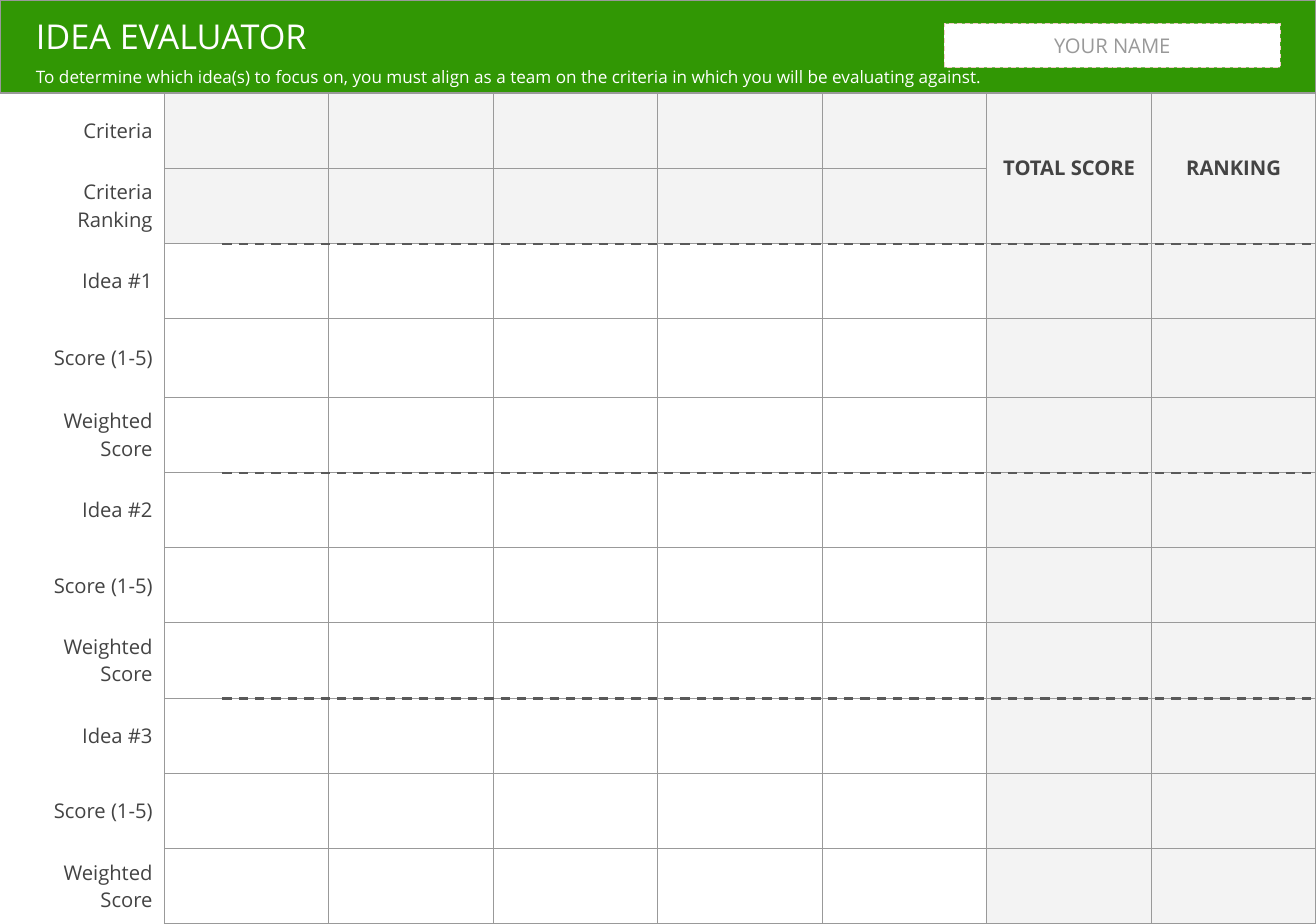
from lxml import etree
from pptx import Presentation
from pptx.dml.color import RGBColor
from pptx.enum.dml import MSO_LINE
from pptx.enum.shapes import MSO_CONNECTOR, MSO_SHAPE
from pptx.enum.text import MSO_ANCHOR, PP_ALIGN
from pptx.oxml.ns import qn
from pptx.util import Pt

RECTANGLE = MSO_SHAPE.RECTANGLE
STRAIGHT = MSO_CONNECTOR.STRAIGHT
DASH = MSO_LINE.DASH
MIDDLE = MSO_ANCHOR.MIDDLE
LEFT, CENTER, RIGHT = PP_ALIGN.LEFT, PP_ALIGN.CENTER, PP_ALIGN.RIGHT

GREEN = RGBColor(0x31, 0x97, 0x04)
WHITE = RGBColor(0xFF, 0xFF, 0xFF)
PINK = RGBColor(0xF4, 0xCC, 0xCC)
PALE_GRAY = RGBColor(0xF3, 0xF3, 0xF3)
GRAY = RGBColor(0x99, 0x99, 0x99)
DARK_GRAY = RGBColor(0x59, 0x59, 0x59)
INK = RGBColor(0x43, 0x43, 0x43)

FONT = "Open Sans"
INSET = 7.75
SLIDE_WIDTH, SLIDE_HEIGHT = 846, 594
HEADER_HEIGHT = 59.8

IDEA_ROWS = ["Score (1-5)", "Weighted Score"]
ROW_LABELS = ["Criteria", "Criteria Ranking"]
for number in (1, 2, 3):
    ROW_LABELS += [f"Idea #{number}"] + IDEA_ROWS
RESULT_LABELS = {6: "TOTAL SCORE", 7: "RANKING"}
COLUMN_COUNT = 8
HEADING_ROWS = 2
ROW_HEIGHT, TALL_ROW_HEIGHT, TALL_ROW = 48.35, 50.6, 3
DIVIDER_ROWS = (2, 5, 8)
DIVIDER_LEFT = 143


def add_text(para, text, size, color, align=LEFT, bold=False):
    para.alignment = align
    span = para.add_run()
    span.text = text
    span.font.name = FONT
    span.font.size = Pt(size)
    span.font.bold = bold
    span.font.color.rgb = color


def set_insets(frame):
    frame.margin_left = frame.margin_right = Pt(INSET)
    frame.margin_top = frame.margin_bottom = Pt(INSET)
    frame.word_wrap = True


def add_box(slide, left, top, width, height, fill, line):
    box = slide.shapes.add_shape(RECTANGLE, Pt(left), Pt(top), Pt(width), Pt(height))
    box.shadow.inherit = False
    box.fill.solid()
    box.fill.fore_color.rgb = fill
    box.line.color.rgb = line
    box.line.width = Pt(0.75)
    return box


def add_header(slide, left, top, width, height):
    add_box(slide, left, top, width, height, GREEN, GRAY)
    heading = slide.shapes.add_textbox(Pt(left + 15.4), Pt(top + 2.2), Pt(626), Pt(104))
    frame = heading.text_frame
    set_insets(frame)
    add_text(frame.paragraphs[0], "IDEA EVALUATOR", 22, WHITE)
    para = frame.add_paragraph()
    para.line_spacing = 1.5
    add_text(para, "To determine which idea(s) to focus on, you must align as a team on "
             "the criteria in which you will be evaluating against.", 11, WHITE)

    name_box = add_box(slide, left + width - 239, top + 15.2, 216, 28.2, WHITE, PINK)
    name_box.line.dash_style = DASH
    frame = name_box.text_frame
    set_insets(frame)
    frame.margin_top = frame.margin_bottom = 0
    frame.vertical_anchor = MIDDLE
    add_text(frame.paragraphs[0], "YOUR NAME", 13, GRAY, CENTER)


def set_borders(cell, visible_sides):
    """Draw the named sides (from L, R, T, B) in gray and hide the others."""
    properties = cell._tc.get_or_add_tcPr()
    for side in "LRTB":
        line = etree.SubElement(properties, qn(f"a:ln{side}"), w=str(Pt(0.75)))
        if side in visible_sides:
            fill = etree.SubElement(line, qn("a:solidFill"))
            etree.SubElement(fill, qn("a:srgbClr"), val=str(GRAY))
        else:
            etree.SubElement(line, qn("a:noFill"))


def label_cell(cell, text, align, bold=False):
    cell.vertical_anchor = MIDDLE
    cell.margin_left = cell.margin_right = Pt(INSET)
    cell.margin_top = cell.margin_bottom = Pt(5)
    add_text(cell.text_frame.paragraphs[0], text, 13, INK, align, bold)


def add_score_table(slide, left, top, width, height):
    row_count = len(ROW_LABELS)
    table = slide.shapes.add_table(row_count, COLUMN_COUNT, Pt(left), Pt(top),
                                   Pt(width), Pt(height)).table
    table.first_row = table.horz_banding = False
    for column in table.columns:
        column.width = Pt(width / COLUMN_COUNT)
    for index, row in enumerate(table.rows):
        row.height = Pt(TALL_ROW_HEIGHT if index == TALL_ROW else ROW_HEIGHT)

    for row in range(row_count):
        for column in range(COLUMN_COUNT):
            cell = table.cell(row, column)
            set_borders(cell, "R" if column == 0 else "LRTB")
            if column and (row < HEADING_ROWS or column in RESULT_LABELS):
                cell.fill.solid()
                cell.fill.fore_color.rgb = PALE_GRAY
            else:
                cell.fill.background()
        label_cell(table.cell(row, 0), ROW_LABELS[row], RIGHT)

    for column, label in RESULT_LABELS.items():
        heading = table.cell(0, column)
        heading.merge(table.cell(HEADING_ROWS - 1, column))
        label_cell(heading, label, CENTER, bold=True)


def add_dividers(slide, left, top, right):
    """Draw a dashed line above each idea."""
    for row in DIVIDER_ROWS:
        extra = TALL_ROW_HEIGHT - ROW_HEIGHT if row > TALL_ROW else 0
        y = Pt(top + row * ROW_HEIGHT + extra + 0.2)
        divider = slide.shapes.add_connector(STRAIGHT, Pt(left), y, Pt(right), y)
        divider.line.color.rgb = DARK_GRAY
        divider.line.width = Pt(1.5)
        divider.line.dash_style = DASH
        etree.SubElement(divider._element.spPr, qn("a:effectLst"))


def main():
    deck = Presentation()
    deck.slide_width, deck.slide_height = Pt(SLIDE_WIDTH), Pt(SLIDE_HEIGHT)
    slide = deck.slides.add_slide(deck.slide_layouts[6])
    add_header(slide, 0, 0, SLIDE_WIDTH, HEADER_HEIGHT)
    add_score_table(slide, 0, HEADER_HEIGHT, SLIDE_WIDTH, SLIDE_HEIGHT - HEADER_HEIGHT)
    add_dividers(slide, DIVIDER_LEFT, HEADER_HEIGHT, SLIDE_WIDTH)
    deck.save("out.pptx")


if __name__ == "__main__":
    main()
